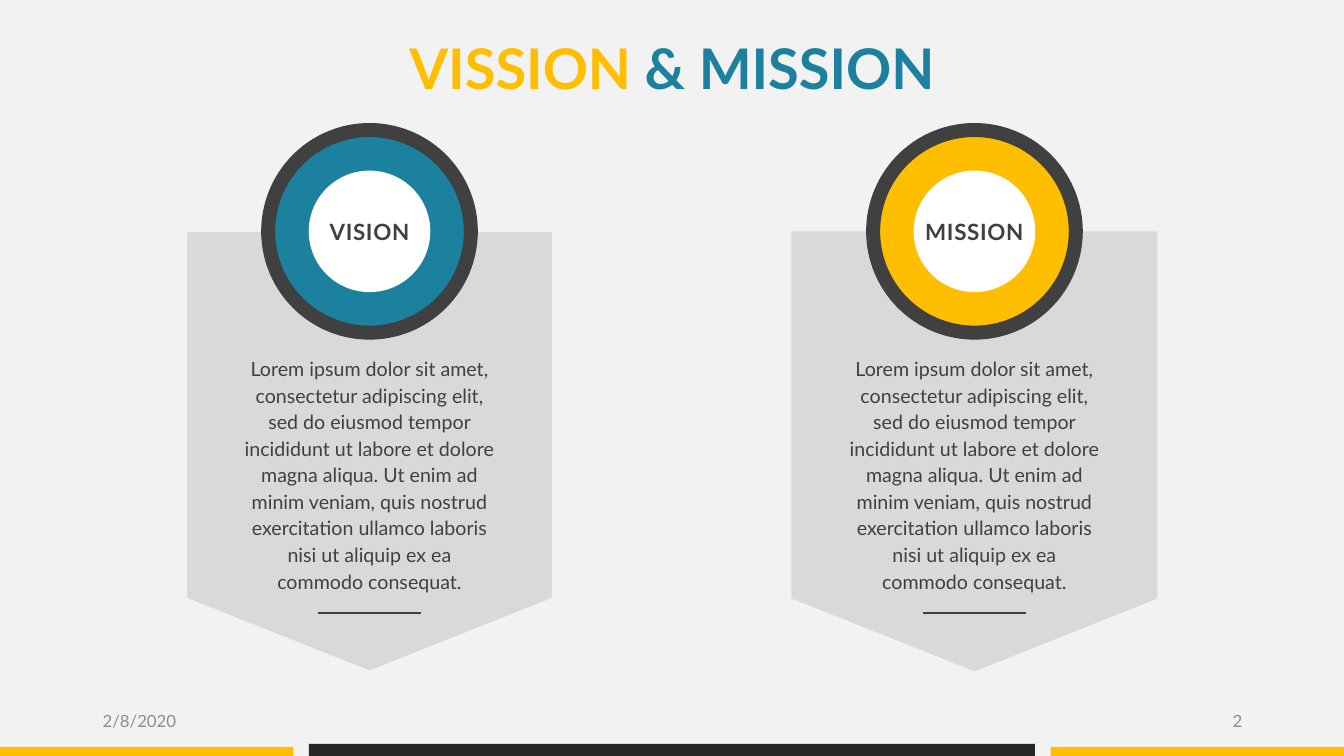
from dataclasses import dataclass

from lxml import etree
from pptx import Presentation
from pptx import util as u
from pptx.dml.color import RGBColor
from pptx.enum import shapes, text
from pptx.oxml import ns


@dataclass(frozen=True)
class Theme:
    font: str = "Lato"
    back: str = "F2F2F2"
    gold: str = "FFBE00"
    teal: str = "1C819E"
    dark: str = "404040"
    bar: str = "262626"
    card: str = "D9D9D9"
    white: str = "FFFFFF"
    muted: str = "8C8C8C"
    title: int = 40
    label: int = 16
    body: int = 14
    footer: int = 12


T = Theme()
W, H = 13.33, 7.5
SHAPE = shapes.MSO_SHAPE
ALIGN = text.PP_ALIGN
ANCHOR = text.MSO_ANCHOR
LOREM = (
    "Lorem ipsum dolor sit amet, consectetur adipiscing elit, sed do eiusmod "
    "tempor incididunt ut labore et dolore magna aliqua. Ut enim ad minim veniam, "
    "quis nostrud exercitation ullamco laboris nisi ut aliquip ex ea commodo consequat."
)


def rgb(color):
    return RGBColor.from_string(color)


def inches(*lengths):
    return [u.Inches(length) for length in lengths]


def style_run(r, size, color, bold=False):
    r.font.name = T.font
    r.font.size = u.Pt(size)
    r.font.bold = bold
    r.font.color.rgb = rgb(color)


def set_frame(tf, anchor=ANCHOR.TOP, inset=0):
    tf.word_wrap = True
    tf.auto_size = text.MSO_AUTO_SIZE.NONE
    tf.vertical_anchor = anchor
    tf.margin_left = tf.margin_right = u.Inches(inset)
    tf.margin_top = tf.margin_bottom = u.Inches(inset / 2)


def add_shape(s, kind, box, fill, line=None, width=0):
    sp = s.shapes.add_shape(kind, *inches(*box))
    sp.shadow.inherit = False
    sp.fill.solid()
    sp.fill.fore_color.rgb = rgb(fill)
    if line:
        sp.line.color.rgb = rgb(line)
        sp.line.width = u.Pt(width)
    else:
        sp.line.fill.background()
    return sp


def add_text(s, box, words, size, color, align=ALIGN.CENTER, bold=False,
             spacing=None, anchor=ANCHOR.TOP, inset=0):
    tf = s.shapes.add_textbox(*inches(*box)).text_frame
    set_frame(tf, anchor, inset)
    p = tf.paragraphs[0]
    p.text = words
    p.alignment = align
    if spacing:
        p.line_spacing = u.Pt(spacing)
    style_run(p.runs[0], size, color, bold)
    return p.runs[0]


def add_circle(s, cx, cy, size, fill, line=None, width=0):
    box = (cx - size / 2, cy - size / 2, size, size)
    add_shape(s, SHAPE.OVAL, box, fill, line, width)


def add_rule(s, cx, y, width):
    rule = s.shapes.add_connector(
        shapes.MSO_CONNECTOR.STRAIGHT, *inches(cx - width / 2, y, cx + width / 2, y))
    rule.line.color.rgb = rgb(T.dark)
    rule.line.width = u.Pt(1.5)
    etree.SubElement(rule._element.spPr, ns.qn("a:effectLst"))


def title_region(s, box):
    title = s.shapes.title
    title.left, title.top, title.width, title.height = inches(*box)
    tf = title.text_frame
    set_frame(tf)
    p = tf.paragraphs[0]
    p.alignment = ALIGN.CENTER
    for words, color in (("VISSION ", T.gold), ("& MISSION", T.teal)):
        r = p.add_run()
        r.text = words
        style_run(r, T.title, color, True)


def statement_region(s, box, label, words, color, outline):
    left, top, width, height = box
    ring = 2.01
    cx, cy = left + width / 2, top + ring / 2
    card_h = height - ring / 2
    mid = cy + card_h / 2
    card = add_shape(s, SHAPE.PENTAGON,
                     (cx - card_h / 2, mid - width / 2, card_h, width),
                     T.card, outline, 1)
    card.rotation = 90
    card.adjustments[0] = 0.199
    add_circle(s, cx, cy, ring, color, T.dark, 10)
    add_circle(s, cx, cy, ring * 0.6, T.white)
    add_text(s, (cx - 1.24, top + 2.22, 2.48, 2.38), words, T.body, T.dark, spacing=19)
    r = add_text(s, (cx - 0.53, cy - 0.14, 1.06, 0.28), label, T.label, T.dark,
                 bold=True, spacing=20)
    r.font._element.set("spc", "50")
    add_rule(s, cx, top + 4.79, 1.02)


def footer_region(s, box, date, number):
    left, top, width, height = box
    field = 3
    for x, words, align in ((left, date, ALIGN.LEFT),
                            (left + width - field, number, ALIGN.RIGHT)):
        add_text(s, (x, top, field, height), words, T.footer, T.muted, align,
                 anchor=ANCHOR.MIDDLE, inset=0.1)


def base_region(s, box):
    left, top, width, height = box
    side, middle, thin = 2.91, 7.2, 0.09
    bottom = top + height
    for x, w, h, color in ((left, side, thin, T.gold),
                           (left + (width - middle) / 2, middle, height, T.bar),
                           (left + width - side, side, thin, T.gold)):
        add_shape(s, SHAPE.RECTANGLE, (x, bottom - h, w, h), color)


def main():
    prs = Presentation()
    prs.slide_width, prs.slide_height = inches(W, H)
    s = prs.slides.add_slide(prs.slide_layouts[5])
    s.background.fill.solid()
    s.background.fill.fore_color.rgb = rgb(T.back)
    title_region(s, (0.78, 0.33, W - 2 * 0.78, 0.67))
    base_region(s, (0, H - 0.12, W, 0.12))
    statements = (("VISION", T.teal, T.back), ("MISSION", T.gold, None))
    for i, (label, color, outline) in enumerate(statements):
        statement_region(s, (1.85 + 6 * i, 1.29, 3.63, 5.37), label, LOREM, color, outline)
    footer_region(s, (0.92, 6.95, 11.5, 0.4), "2/8/2020", "2")
    prs.save("out.pptx")


if __name__ == "__main__":
    main()
